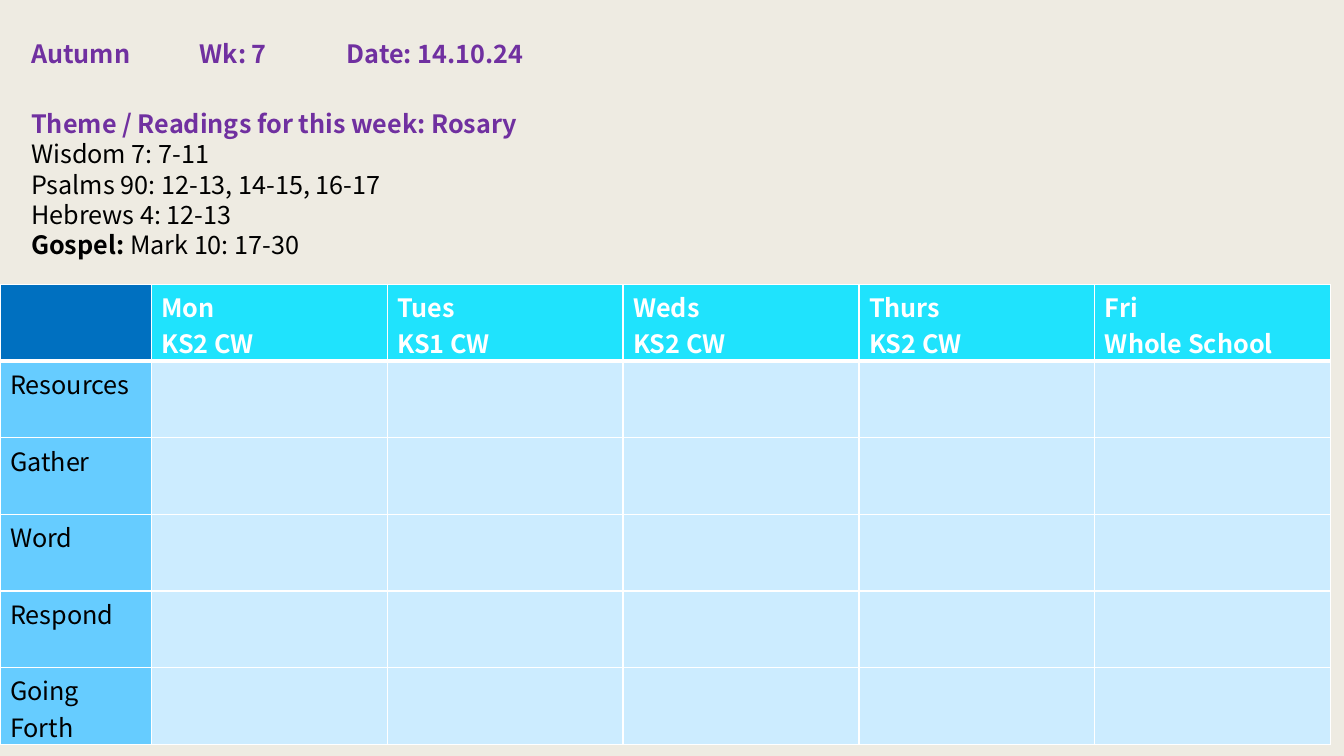
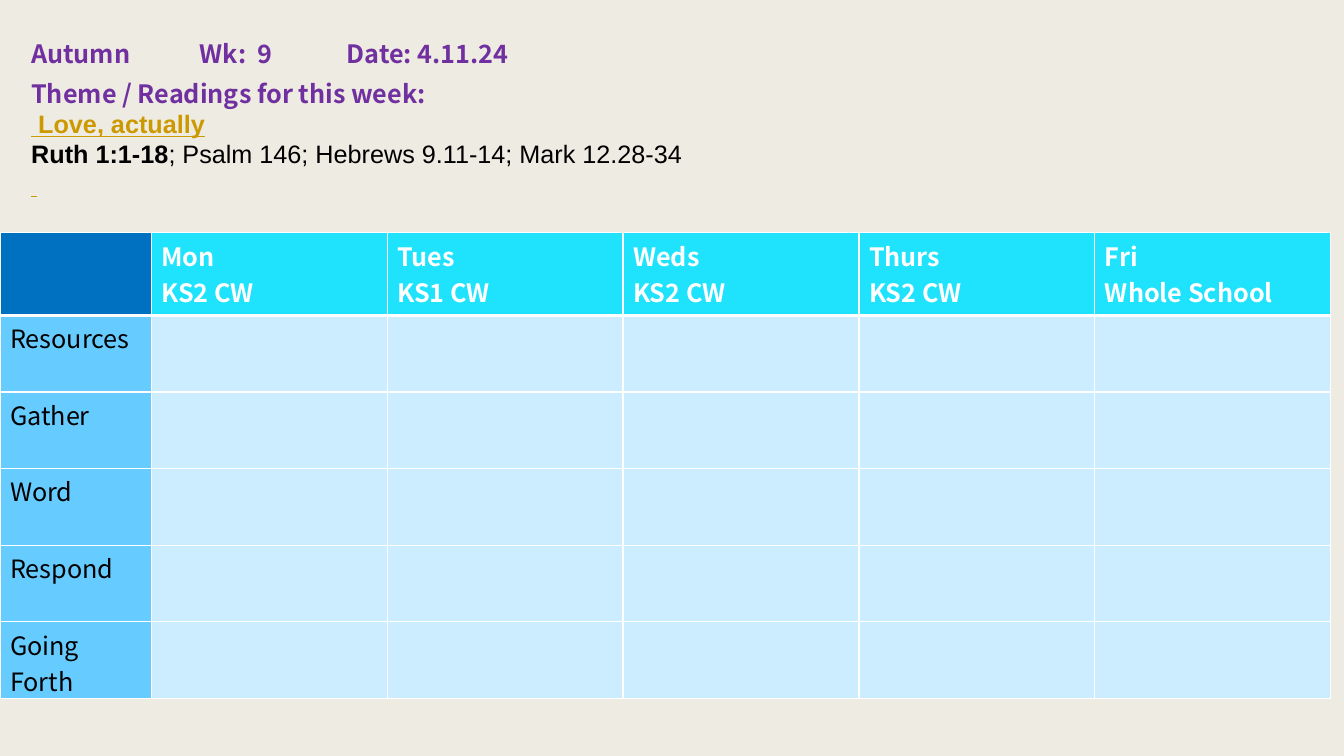
from lxml import etree
from pptx import Presentation
from pptx.dml.color import RGBColor
from pptx.enum.text import MSO_ANCHOR, MSO_AUTO_SIZE, PP_ALIGN
from pptx.oxml.ns import qn
from pptx.util import Pt

EMU_PER_PX = 9144  # 100 px to the inch

LEFT = PP_ALIGN.LEFT
TOP = MSO_ANCHOR.TOP
NO_AUTOFIT = MSO_AUTO_SIZE.NONE

CREAM = RGBColor(0xEE, 0xEB, 0xE2)
PURPLE = RGBColor(0x70, 0x30, 0xA0)
GOLD = RGBColor(0xCC, 0x99, 0x00)
BLACK = RGBColor(0, 0, 0)
WHITE = RGBColor(0xFF, 0xFF, 0xFF)
CORNER_BLUE = RGBColor(0x00, 0x70, 0xC0)
DAY_CYAN = RGBColor(0x1F, 0xE3, 0xFD)
STAGE_BLUE = RGBColor(0x66, 0xCC, 0xFF)
PLAN_BLUE = RGBColor(0xCC, 0xEC, 0xFF)

SANS = "Noto Sans CJK JP"
ARIAL = "Arial"
TIMES = "Times New Roman"

DAYS = [("Mon", "KS2 CW"), ("Tues", "KS1 CW"), ("Weds", "KS2 CW"),
        ("Thurs", "KS2 CW"), ("Fri", "Whole School")]
STAGES = ["Resources", "Gather", "Word", "Respond", "Going Forth"]
STAGE_WIDTH, DAY_WIDTH, ROW_HEIGHT = 150, 234, 76
HEADING_TABS = (167, 313)

THEME = {"bold": True, "color": PURPLE}
THEME_LINK = {"bold": True, "color": GOLD, "font": ARIAL, "underline": True}

WEEKS = [
    {
        "heading": "Autumn\tWk: 7\tDate: 14.10.24",
        "readings_top": 103,
        "readings_height": 170,
        "readings": [
            [("Theme / Readings for this week: Rosary", THEME)],
            [("Wisdom 7: 7-11", {})],
            [("Psalms 90: 12-13, 14-15, 16-17", {})],
            [("Hebrews 4: 12-13", {})],
            [("Gospel:", {"bold": True}), ("\u00a0Mark 10: 17-30", {})],
        ],
        "plan_top": 282,
        "day_row_height": ROW_HEIGHT,
    },
    {
        "heading": "Autumn\tWk:  9\tDate: 4.11.24",
        "readings_top": 73,
        "readings_height": 131,
        "readings": [
            [("Theme / Readings for this week:", THEME)],
            [("\u00a0Love, actually", THEME_LINK)],
            [("Ruth 1:1-18", {"bold": True, "font": ARIAL}),
             ("; Psalm 146; Hebrews 9.11-14; Mark 12.28-34", {"font": ARIAL})],
            [("\u00a0", {"color": GOLD, "font": TIMES, "underline": True})],
        ],
        "plan_top": 231,
        "day_row_height": 82,
    },
]


def px(length):
    return length * EMU_PER_PX


def write(paragraph, text, font=SANS, size=18, color=BLACK, bold=False,
          underline=False):
    """Add one formatted run to a paragraph."""
    run = paragraph.add_run()
    run.text = text
    run.font.name = font
    run.font.size = Pt(size)
    run.font.bold = bold
    run.font.underline = underline
    run.font.color.rgb = color


def place(placeholder, left, top, width, height):
    """Move a placeholder and return its text frame, set to start at the top."""
    placeholder.left, placeholder.top = px(left), px(top)
    placeholder.width, placeholder.height = px(width), px(height)
    frame = placeholder.text_frame
    frame.word_wrap = True
    frame.auto_size = NO_AUTOFIT
    frame.vertical_anchor = TOP
    return frame


def paragraphs_for(frame, items):
    """Yield each item with a paragraph of its own."""
    for index, item in enumerate(items):
        yield (frame.add_paragraph() if index else frame.paragraphs[0]), item


def add_heading(slide, text):
    paragraph = place(slide.shapes.title, 21, 32, 1298, 40).paragraphs[0]
    properties = paragraph._p.get_or_add_pPr()
    tabs = etree.SubElement(properties, qn("a:tabLst"))
    for position in HEADING_TABS:
        etree.SubElement(tabs, qn("a:tab"), pos=str(px(position)), algn="l")
    paragraph.alignment = LEFT
    paragraph.line_spacing = Pt(22)
    write(paragraph, text, bold=True, color=PURPLE)


def add_readings(slide, lines, top, height):
    frame = place(slide.placeholders[1], 21, top, 1218, height)
    for paragraph, runs in paragraphs_for(frame, lines):
        properties = paragraph._p.get_or_add_pPr()
        properties.set("marL", "0")
        properties.set("indent", "0")
        etree.SubElement(properties, qn("a:buNone"))
        paragraph.space_before = Pt(0)
        paragraph.line_spacing = Pt(21.5)
        for text, style in runs:
            write(paragraph, text, **style)


def style_cell(cell, fill, bottom_border=1):
    """Give a cell white borders, a fill and tight vertical margins."""
    properties = cell._tc.get_or_add_tcPr()
    for side, width in (("L", 1), ("R", 1), ("T", 1), ("B", bottom_border)):
        border = etree.SubElement(properties, qn(f"a:ln{side}"), w=str(Pt(width)))
        paint = etree.SubElement(border, qn("a:solidFill"))
        etree.SubElement(paint, qn("a:srgbClr"), val=str(WHITE))
    cell.fill.solid()
    cell.fill.fore_color.rgb = fill
    cell.margin_top, cell.margin_bottom = px(4), 0


def fill_cell(cell, lines, **style):
    for paragraph, line in paragraphs_for(cell.text_frame, lines):
        write(paragraph, line, **style)


def add_plan(slide, top, day_row_height):
    """Add the weekly grid of worship stages against days."""
    width = STAGE_WIDTH + DAY_WIDTH * len(DAYS)
    height = day_row_height + ROW_HEIGHT * len(STAGES)
    plan = slide.shapes.add_table(len(STAGES) + 1, len(DAYS) + 1,
                                  0, px(top), px(width), px(height)).table
    for index, column in enumerate(plan.columns):
        column.width = px(DAY_WIDTH if index else STAGE_WIDTH)
    for index, row in enumerate(plan.rows):
        row.height = px(ROW_HEIGHT if index else day_row_height)

    style_cell(plan.cell(0, 0), CORNER_BLUE, bottom_border=3)
    for column, day in enumerate(DAYS, 1):
        cell = plan.cell(0, column)
        style_cell(cell, DAY_CYAN, bottom_border=3)
        fill_cell(cell, day, color=WHITE, bold=True)
    for row, stage in enumerate(STAGES, 1):
        style_cell(plan.cell(row, 0), STAGE_BLUE)
        fill_cell(plan.cell(row, 0), [stage])
        for column in range(1, len(DAYS) + 1):
            style_cell(plan.cell(row, column), PLAN_BLUE)


def main():
    prs = Presentation()
    prs.slide_width, prs.slide_height = px(1333), px(750)
    background = prs.slide_master.background.fill
    background.solid()
    background.fore_color.rgb = CREAM
    for week in WEEKS:
        slide = prs.slides.add_slide(prs.slide_layouts[1])
        add_heading(slide, week["heading"])
        add_readings(slide, week["readings"], week["readings_top"],
                     week["readings_height"])
        add_plan(slide, week["plan_top"], week["day_row_height"])
    prs.save("out.pptx")


if __name__ == "__main__":
    main()
